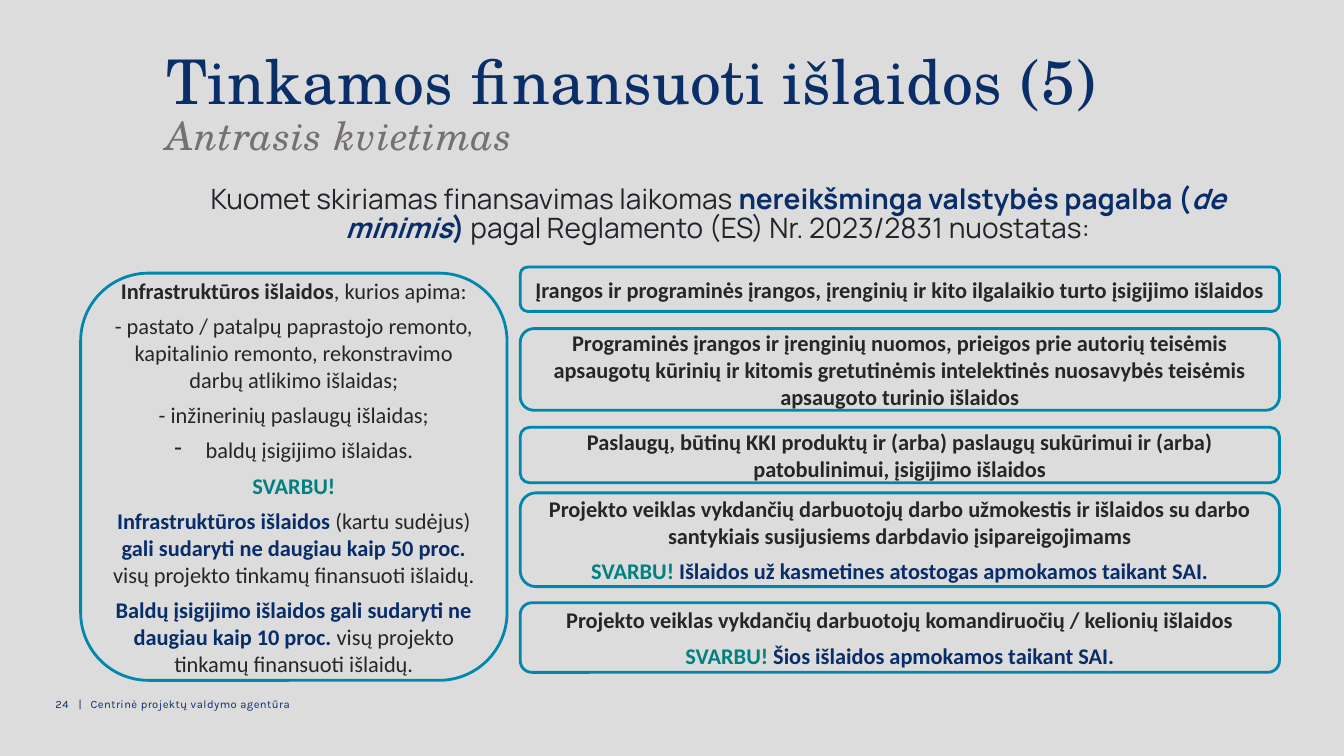
from dataclasses import dataclass

from lxml.etree import SubElement
from pptx import Presentation
from pptx.dml.color import RGBColor as RGB
from pptx.enum.shapes import MSO_SHAPE as SHAPE
from pptx.enum.text import MSO_ANCHOR as ANCHOR, PP_ALIGN as ALIGN
from pptx.oxml.ns import qn
from pptx.util import Emu, Inches, Pt


@dataclass(frozen=True)
class Theme:
    """Hold the colours, type sizes and run styles of the slide."""
    ground: str = "DCDCDC"
    outline: str = "0187AC"
    line_width: float = 2

    def font(self, style):
        """Return the font values of a named run style."""
        name, size, color, bold, italic, spacing = {
            "title": ("TeX Gyre Schola", 44, "092E68", False, False, 40),
            "subtitle": ("TeX Gyre Schola", 28, "767171", False, True, 40),
            "footer": ("Karla", 8, "092E68", False, False, 30),
            "intro": ("Manrope", 20, "212529", False, False, 0),
            "intro_key": ("Manrope", 20, "092D68", True, False, 0),
            "intro_latin": ("Manrope", 20, "092D68", True, True, 0),
            "body": ("Calibri", 16, "262626", False, False, 0),
            "strong": ("Calibri", 16, "262626", True, False, 0),
            "key": ("Calibri", 16, "092D68", True, False, 0),
            "alert": ("Calibri", 16, "008080", True, False, 0),
        }[style]
        return dict(name=name, size=Pt(size), bold=bold, italic=italic), color, spacing


THEME = Theme()
WIDTH, HEIGHT = Inches(13.33), Inches(7.5)

TITLE_BOX = (11.63, 6.93, 83.57, 14)
INTRO_BOX = (11.63, 24, 83.57, 8.67)
LEFT_BOX = (6, 36.13, 31.73, 53.87)
RIGHT_BOX = (38.71, 35.33, 56.49, 53.6)
FOOTER_BOX = (3.38, 91.6, 24.01, 5.33)

TITLE = [[("Tinkamos finansuoti išlaidos (5)", "title")],
         [("Antrasis kvietimas", "subtitle")]]
INTRO = [[("Kuomet skiriamas finansavimas laikomas ", "intro"),
          ("nereikšminga valstybės pagalba (", "intro_key"),
          ("de minimis", "intro_latin"), (")", "intro_key"),
          (" pagal Reglamento (ES) Nr. 2023/2831 nuostatas:", "intro")]]
FOOTER = [[("24\t|\tCentrinė projektų valdymo agentūra", "footer")]]
INFRASTRUCTURE = [
    [("Infrastruktūros išlaidos", "strong"), (", kurios apima:", "body")],
    [("- pastato / patalpų paprastojo remonto, kapitalinio remonto, "
      "rekonstravimo darbų atlikimo išlaidas;", "body")],
    [("- inžinerinių paslaugų išlaidas;", "body")],
    [("baldų įsigijimo išlaidas.", "body")],
    [("SVARBU!", "alert")],
    [("Infrastruktūros išlaidos ", "key"), ("(kartu sudėjus) ", "body"),
     ("gali sudaryti ne daugiau kaip 50 proc. ", "key"),
     ("visų projekto tinkamų finansuoti išlaidų.", "body")],
    [("Baldų įsigijimo išlaidos gali sudaryti ne daugiau kaip 10 proc.", "key"),
     (" visų projekto tinkamų finansuoti išlaidų.", "body")],
]
FURNITURE_ROW = 3
COSTS = [
    (0, 5.87, "Įrangos ir programinės įrangos, įrenginių ir kito ilgalaikio turto "
     "įsigijimo išlaidos", None),
    (8.14, 10.8, "Programinės įrangos ir įrenginių nuomos, prieigos prie autorių teisėmis "
     "apsaugotų kūrinių ir kitomis gretutinėmis intelektinės nuosavybės teisėmis "
     "apsaugoto turinio išlaidos", None),
    (21.2, 7.33, "Paslaugų, būtinų KKI produktų ir (arba) paslaugų sukūrimui ir (arba) "
     "patobulinimui, įsigijimo išlaidos", None),
    (29.87, 12.4, "Projekto veiklas vykdančių darbuotojų darbo užmokestis ir išlaidos su "
     "darbo santykiais susijusiems darbdavio įsipareigojimams",
     "Išlaidos už kasmetines atostogas apmokamos taikant SAI."),
    (44.4, 9.2, "Projekto veiklas vykdančių darbuotojų komandiruočių / kelionių išlaidos",
     "Šios išlaidos apmokamos taikant SAI."),
]


def place(box):
    """Turn a box in percent of the slide into slide lengths."""
    x, y, w, h = box
    return [Emu(round(share * side / 100))
            for share, side in ((x, WIDTH), (y, HEIGHT), (w, WIDTH), (h, HEIGHT))]


def add_tabs(p, *stops):
    """Give a paragraph left tab stops, in inches."""
    tabs = SubElement(p._p.get_or_add_pPr(), qn("a:tabLst"))
    for stop in stops:
        SubElement(tabs, qn("a:tab"), pos=str(Inches(stop)), algn="l")


def add_dash(p, indent):
    """Give a paragraph a hanging dash bullet."""
    props = p._p.get_or_add_pPr()
    props.set("marL", str(Inches(indent)))
    props.set("indent", str(-Inches(indent)))
    SubElement(props, qn("a:buChar"), char="-")


def write(tf, paragraphs, **layout):
    """Fill a text frame with styled runs and return its paragraphs."""
    tf.word_wrap = True
    for i, runs in enumerate(paragraphs):
        p = tf.paragraphs[0] if i == 0 else tf.add_paragraph()
        for key, value in layout.items():
            setattr(p, key, value)
        for text, style in runs:
            r = p.add_run()
            r.text = text
            values, color, spacing = THEME.font(style)
            for key, value in values.items():
                setattr(r.font, key, value)
            r.font.color.rgb = RGB.from_string(color)
            if spacing:
                r._r.get_or_add_rPr().set("spc", str(spacing))
    return tf.paragraphs


def add_text(s, box, paragraphs, **layout):
    """Place a plain text box."""
    return write(s.shapes.add_textbox(*place(box)).text_frame, paragraphs, **layout)


def add_card(s, box, paragraphs):
    """Place an outlined rounded card with centred text."""
    sp = s.shapes.add_shape(SHAPE.ROUNDED_RECTANGLE, *place(box))
    sp.shadow.inherit = False
    sp.fill.background()
    sp.line.color.rgb = RGB.from_string(THEME.outline)
    sp.line.width = Pt(THEME.line_width)
    sp.text_frame.vertical_anchor = ANCHOR.MIDDLE
    return write(sp.text_frame, paragraphs, alignment=ALIGN.CENTER, space_after=Pt(6))


def add_infrastructure(s, box):
    """Place the infrastructure card with its dashed item."""
    add_dash(add_card(s, box, INFRASTRUCTURE)[FURNITURE_ROW], 0.31)


def add_costs(s, box):
    """Stack the cost cards down the given column."""
    x, y, w, _ = box
    for top, height, cost, warning in COSTS:
        paragraphs = [[(cost, "strong")]]
        if warning:
            paragraphs.append([("SVARBU! ", "alert"), (warning, "key")])
        add_card(s, (x, y + top, w, height), paragraphs)


def add_footer(s, box):
    """Place the page number and the agency name."""
    add_tabs(add_text(s, box, FOOTER)[0], 0.23, 0.35)


def main():
    """Build and save the slide."""
    prs = Presentation()
    prs.slide_width, prs.slide_height = WIDTH, HEIGHT
    s = prs.slides.add_slide(prs.slide_layouts[6])
    s.background.fill.solid()
    s.background.fill.fore_color.rgb = RGB.from_string(THEME.ground)
    add_text(s, TITLE_BOX, TITLE, line_spacing=0.8, space_after=Pt(3))
    add_text(s, INTRO_BOX, INTRO, alignment=ALIGN.CENTER, line_spacing=0.86,
             space_after=Pt(6))
    add_infrastructure(s, LEFT_BOX)
    add_costs(s, RIGHT_BOX)
    add_footer(s, FOOTER_BOX)
    prs.save("out.pptx")


if __name__ == "__main__":
    main()
